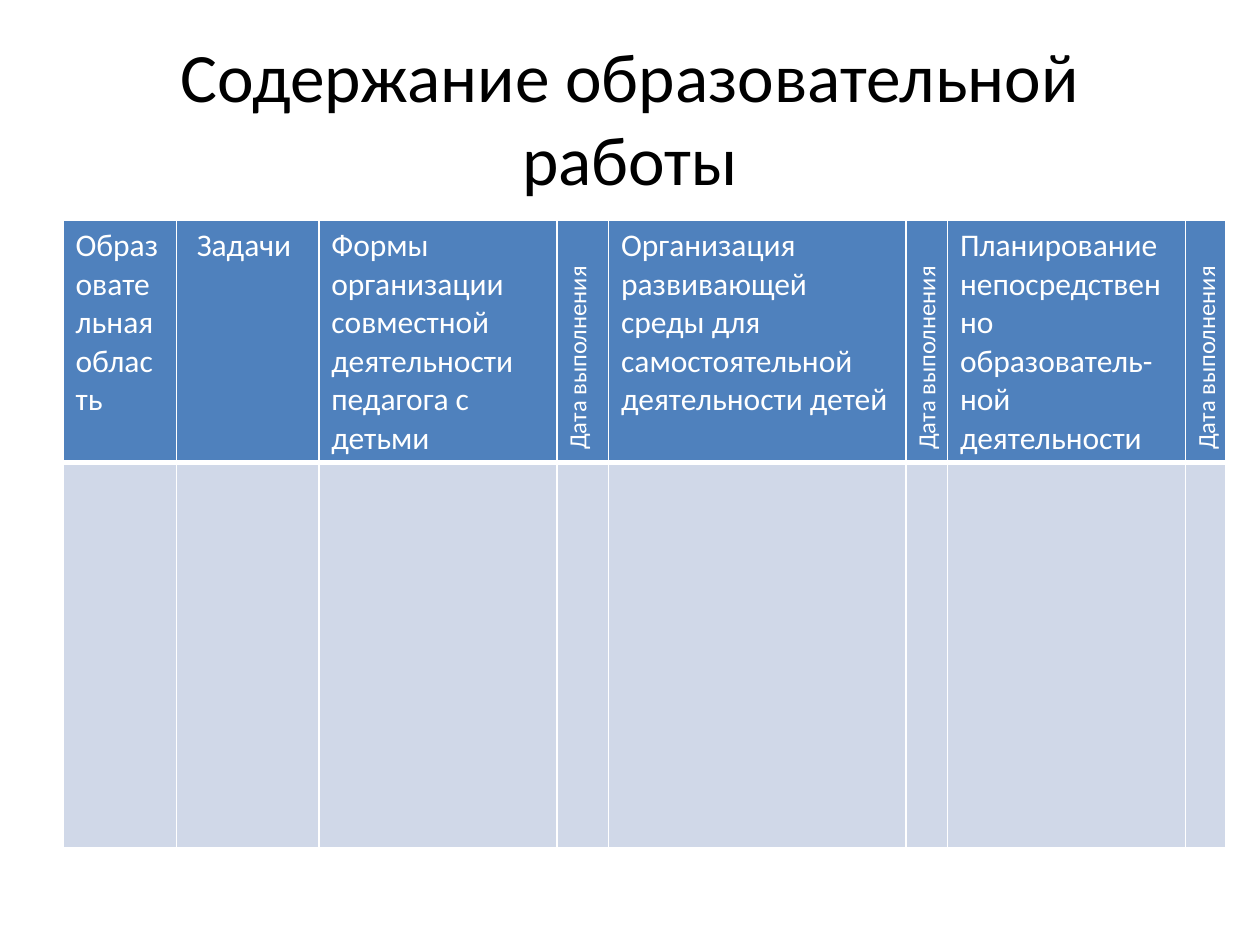
from lxml import etree
from pptx import Presentation
from pptx.dml.color import RGBColor
from pptx.enum.text import MSO_ANCHOR, PP_ALIGN
from pptx.oxml.ns import qn
from pptx.util import Inches, Pt

LEFT, CENTER = PP_ALIGN.LEFT, PP_ALIGN.CENTER
MIDDLE = MSO_ANCHOR.MIDDLE

TITLE = "Содержание образовательной работы"
DATE = "Дата выполнения"
# heading, column width, style
COLUMNS = [
    ("Образовательная область", 0.9, "heading"),
    ("Задачи ", 1.13, "centered"),
    ("Формы организации совместной деятельности педагога с детьми", 1.89, "heading"),
    (DATE, 0.41, "date"),
    ("Организация развивающей среды для самостоятельной деятельности детей", 2.36, "heading"),
    (DATE, 0.33, "date"),
    ("Планирование непосредственно образователь-ной деятельности", 1.89, "heading"),
    (DATE, 0.32, "date"),
]
ROW_HEIGHTS = [1.92, 3.06]

THEME = {
    "font": "Calibri",
    "title": {"size": 39.6, "color": "000000", "align": CENTER},
    "heading": {"size": 18, "color": "FFFFFF", "align": LEFT},
    "centered": {"size": 18, "color": "FFFFFF", "align": CENTER},
    "date": {"size": 14, "color": "FFFFFF", "align": LEFT},
    "header_fill": "4F81BD",
    "body_fill": "D0D8E8",
    "border": "FFFFFF",
}
HEADER_BORDERS = {"lnL": 1, "lnR": 1, "lnT": 1, "lnB": 3}
BODY_BORDERS = {"lnL": 1, "lnR": 1, "lnT": 1, "lnB": 1}


def write(frame, text, style):
    look = THEME[style]
    para = frame.paragraphs[0]
    para.alignment = look["align"]
    span = para.add_run()
    span.text = text
    span.font.color.rgb = RGBColor.from_string(look["color"])
    formats = {"name": THEME["font"], "size": Pt(look["size"]), "bold": False}
    for name, value in formats.items():
        setattr(span.font, name, value)


def paint(cell, fill, borders):
    """Fill a cell and draw its borders; line elements must precede the fill."""
    properties = cell._tc.get_or_add_tcPr()
    for side, width in borders.items():
        line = etree.SubElement(properties, qn("a:" + side), w=str(Pt(width)))
        solid = etree.SubElement(line, qn("a:solidFill"))
        etree.SubElement(solid, qn("a:srgbClr"), val=THEME["border"])
    cell.fill.solid()
    cell.fill.fore_color.rgb = RGBColor.from_string(fill)


def add_title(page):
    box = page.shapes.add_textbox(Inches(0.5), Inches(0.3), Inches(9), Inches(1.25))
    frame = box.text_frame
    for name, value in {"word_wrap": True, "vertical_anchor": MIDDLE}.items():
        setattr(frame, name, value)
    write(frame, TITLE, "title")


def add_plan(page):
    width = sum(column[1] for column in COLUMNS)
    table = page.shapes.add_table(
        len(ROW_HEIGHTS), len(COLUMNS), Inches(0.5), Inches(1.75),
        Inches(width), Inches(sum(ROW_HEIGHTS))).table
    for row, height in zip(table.rows, ROW_HEIGHTS):
        row.height = Inches(height)
    for index, (heading, column_width, style) in enumerate(COLUMNS):
        table.columns[index].width = Inches(column_width)
        header, body = table.cell(0, index), table.cell(1, index)
        paint(header, THEME["header_fill"], HEADER_BORDERS)
        paint(body, THEME["body_fill"], BODY_BORDERS)
        write(header.text_frame, heading, style)
        if style == "date":
            header._tc.get_or_add_tcPr().set("vert", "vert270")


def main():
    deck = Presentation()
    deck.slide_width, deck.slide_height = Inches(10), Inches(7.5)
    page = deck.slides.add_slide(deck.slide_layouts[6])
    add_title(page)
    add_plan(page)
    deck.save("out.pptx")


if __name__ == "__main__":
    main()
